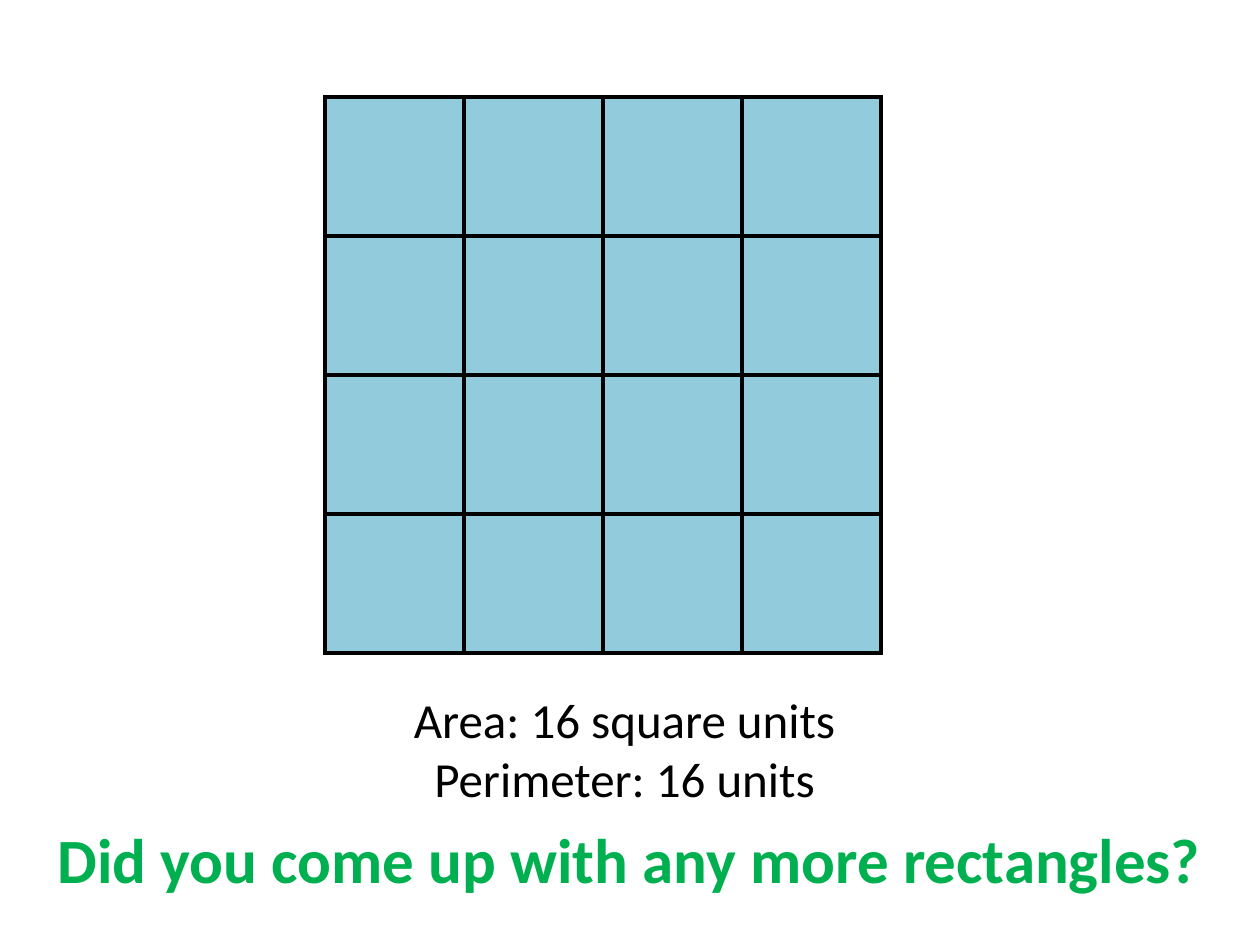
import pptx
import pptx.dml.color
import pptx.enum.text
import pptx.util
from lxml import etree
from pptx.oxml.ns import qn

EMU_PER_PX = 914400 / 126
BLACK = pptx.dml.color.RGBColor(0x00, 0x00, 0x00)
GREEN = pptx.dml.color.RGBColor(0x00, 0xB0, 0x50)
LIGHT_BLUE = pptx.dml.color.RGBColor(0x92, 0xCC, 0xDC)
FONT = "Calibri"
GRID_SIZE = 4
UNIT = 139


def px(length):
    return pptx.util.Emu(round(length * EMU_PER_PX))


def set_borders(cell, color, width):
    properties = cell._tc.get_or_add_tcPr()
    for side in ("a:lnL", "a:lnR", "a:lnT", "a:lnB"):
        line = etree.SubElement(properties, qn(side), w=str(pptx.util.Pt(width)))
        fill = etree.SubElement(line, qn("a:solidFill"))
        etree.SubElement(fill, qn("a:srgbClr"), val=str(color))


def add_unit_grid(slide, left, top):
    """Add a square of unit squares as a table without text."""
    side = px(GRID_SIZE * UNIT)
    table = slide.shapes.add_table(
        GRID_SIZE, GRID_SIZE, px(left), px(top), side, side
    ).table
    table.first_row = False
    table.horz_banding = False
    for column in table.columns:
        column.width = px(UNIT)
    for row in table.rows:
        row.height = px(UNIT)
    for cell in table.iter_cells():
        set_borders(cell, BLACK, 2.25)
        cell.fill.solid()
        cell.fill.fore_color.rgb = LIGHT_BLUE


def add_centered_text(slide, box, lines, size, color, bold=False):
    text_frame = slide.shapes.add_textbox(*map(px, box)).text_frame
    text_frame.word_wrap = True
    text_frame.text = "\n".join(lines)
    for paragraph in text_frame.paragraphs:
        paragraph.alignment = pptx.enum.text.PP_ALIGN.CENTER
        paragraph.font.name = FONT
        paragraph.font.size = pptx.util.Pt(size)
        paragraph.font.bold = bold
        paragraph.font.color.rgb = color


def main():
    presentation = pptx.Presentation()
    presentation.slide_width = px(1260)
    presentation.slide_height = px(945)
    slide = presentation.slides.add_slide(presentation.slide_layouts[6])

    add_unit_grid(slide, 325, 97)
    measures = ["Area: 16 square units", "Perimeter: 16 units"]
    add_centered_text(slide, (357, 683, 535, 131), measures, 28, BLACK)
    question = ["Did you come up with any more rectangles?"]
    add_centered_text(slide, (31, 814, 1197, 89), question, 36, GREEN, bold=True)

    presentation.save("out.pptx")


if __name__ == "__main__":
    main()
